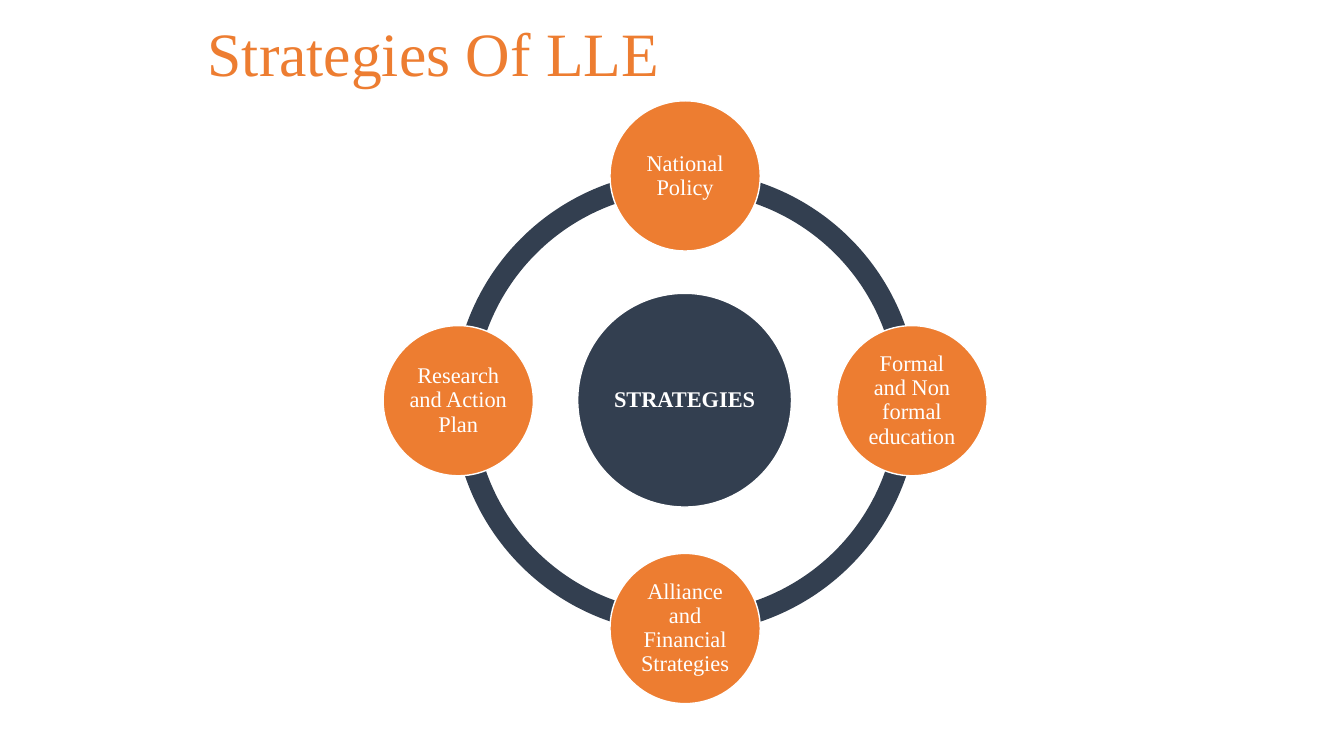
import dataclasses
import pptx
import pptx.dml.color
import pptx.enum.shapes
import pptx.enum.text
import pptx.shapes.autoshape
import pptx.slide
import pptx.text.text
import pptx.util

SCALE = 9144  # EMU per px, 100 px to the inch
FONT = "Times New Roman"
COLORS = {"navy": "333F50", "orange": "ED7D31", "white": "FFFFFF"}
KIND = pptx.enum.shapes.MSO_SHAPE
ALIGN = pptx.enum.text.PP_ALIGN


@dataclasses.dataclass(frozen=True)
class Arc:
    top: int
    start: float  # degrees, clockwise from the right
    end: float


@dataclasses.dataclass(frozen=True)
class Disc:
    label: str
    left: int
    top: int
    size: int = 149
    fill: str = "orange"
    bold: bool = False


RING_LEFT, RING_SIZE, RING_WIDTH = 449, 462, 0.046
ARCS = [
    Arc(169, 180.56, 270),
    Arc(167, 90, 180),
    Arc(167, 0, 90),
    Arc(169, 270, 359.44),
]
DISCS = [
    Disc("STRATEGIES", 573, 291, 212, "navy", True),
    Disc("National Policy", 605, 100),
    Disc("Formal and Non formal education", 830, 323),
    Disc("Alliance and Financial Strategies", 605, 549),
    Disc("Research and Action Plan", 380, 323),
]


def px(size: int) -> pptx.util.Emu:
    return pptx.util.Emu(size * SCALE)


def rgb(name: str) -> pptx.dml.color.RGBColor:
    return pptx.dml.color.RGBColor.from_string(COLORS[name])


def write(frame: pptx.text.text.TextFrame, text: str, size: int,
          color: str, align: ALIGN, bold: bool = False) -> None:
    frame.word_wrap = True
    frame.auto_size = pptx.enum.text.MSO_AUTO_SIZE.NONE
    frame.vertical_anchor = pptx.enum.text.MSO_ANCHOR.MIDDLE
    para = frame.paragraphs[0]
    para.alignment = align
    para.line_spacing = 0.9
    run = para.add_run()
    run.text = text
    run.font.name = FONT
    run.font.size = pptx.util.Pt(size)
    run.font.bold = bold
    run.font.color.rgb = rgb(color)


def add_round(slide: pptx.slide.Slide, kind: KIND, left: int, top: int,
              size: int, fill: str) -> pptx.shapes.autoshape.Shape:
    shape = slide.shapes.add_shape(kind, px(left), px(top), px(size), px(size))
    shape.shadow.inherit = False
    shape.fill.solid()
    shape.fill.fore_color.rgb = rgb(fill)
    return shape


def draw_arc(slide: pptx.slide.Slide, arc: Arc) -> None:
    shape = add_round(slide, KIND.BLOCK_ARC, RING_LEFT, arc.top, RING_SIZE, "navy")
    shape.line.fill.background()
    # Angles are stored in 60000ths of a degree, adjustments in 100000ths
    shape.adjustments[0] = arc.start * 0.6
    shape.adjustments[1] = arc.end * 0.6
    shape.adjustments[2] = RING_WIDTH


def draw_disc(slide: pptx.slide.Slide, disc: Disc) -> None:
    shape = add_round(slide, KIND.OVAL, disc.left, disc.top, disc.size, disc.fill)
    shape.line.color.rgb = rgb("white")
    shape.line.width = pptx.util.Pt(1)
    frame = shape.text_frame
    frame.margin_left = frame.margin_right = px(2)
    frame.margin_top = frame.margin_bottom = px(2)
    write(frame, disc.label, 16, "white", ALIGN.CENTER, disc.bold)


def main() -> None:
    deck = pptx.Presentation()
    deck.slide_width, deck.slide_height = px(1333), px(750)
    slide = deck.slides.add_slide(deck.slide_layouts.get_by_name("Title Only"))

    # Title
    title = slide.shapes.title
    title.left, title.top = px(196), px(0)
    title.width, title.height = px(818), px(112)
    write(title.text_frame, "Strategies Of LLE", 44, "orange", ALIGN.LEFT)

    # Ring, then the hub and its four strategies
    for arc in ARCS:
        draw_arc(slide, arc)
    for disc in DISCS:
        draw_disc(slide, disc)

    deck.save("out.pptx")


if __name__ == "__main__":
    main()
